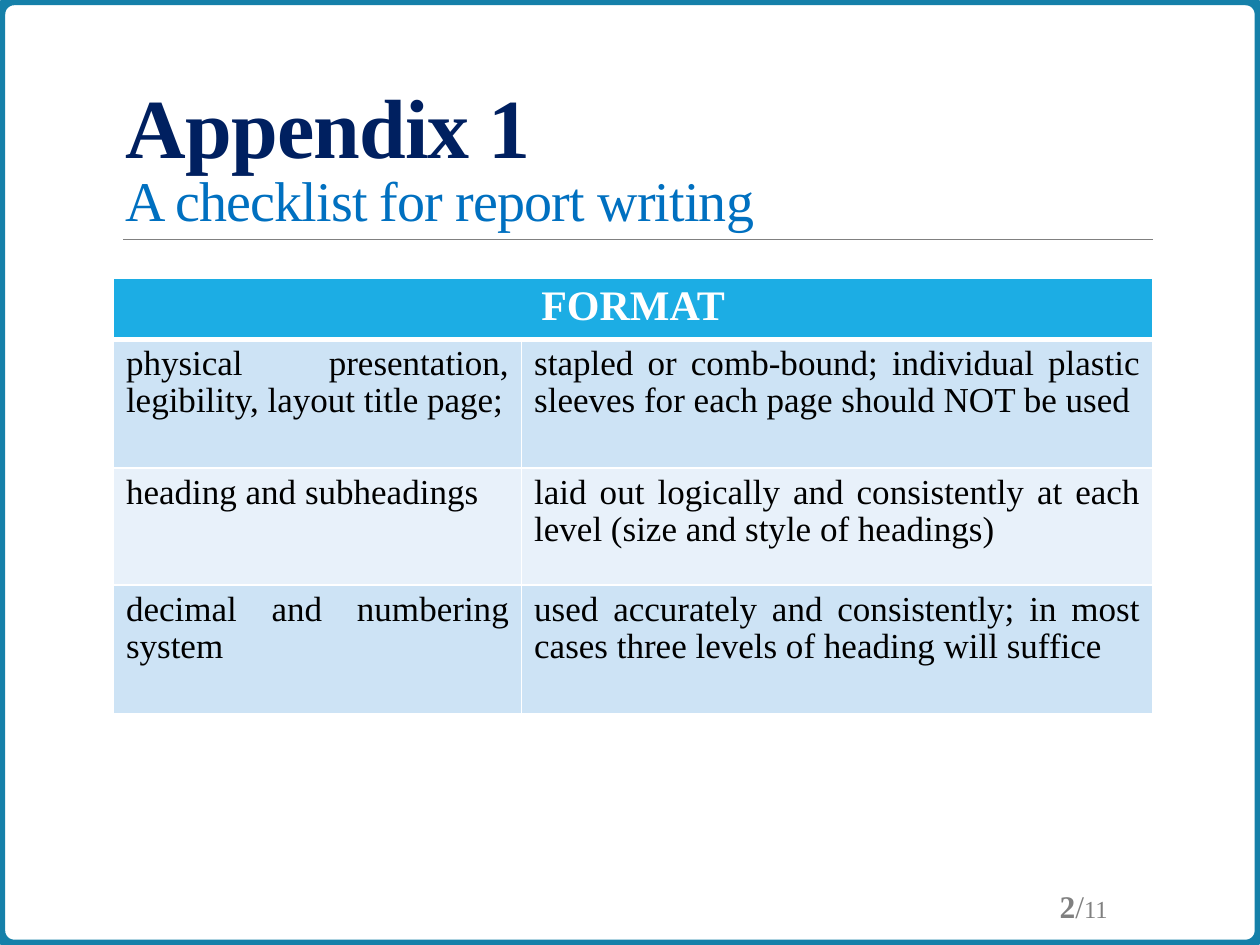
from pptx import Presentation
from pptx.dml.color import RGBColor
from pptx.enum.shapes import MSO_CONNECTOR, MSO_SHAPE
from pptx.enum.text import MSO_ANCHOR, PP_ALIGN
from pptx.oxml.ns import qn
from pptx.util import Inches, Pt
from lxml import etree

STRAIGHT = MSO_CONNECTOR.STRAIGHT
ROUNDED = MSO_SHAPE.ROUNDED_RECTANGLE
TOP, MIDDLE, BOTTOM = MSO_ANCHOR.TOP, MSO_ANCHOR.MIDDLE, MSO_ANCHOR.BOTTOM
LEFT, CENTER, RIGHT, JUSTIFY = PP_ALIGN.LEFT, PP_ALIGN.CENTER, PP_ALIGN.RIGHT, PP_ALIGN.JUSTIFY

FONT = "Times New Roman"
WHITE = RGBColor(0xFF, 0xFF, 0xFF)
BLACK = RGBColor(0, 0, 0)
GRAY = RGBColor(0x80, 0x80, 0x80)
TEAL = RGBColor(0x15, 0x80, 0xA9)
NAVY = RGBColor(0x00, 0x20, 0x60)
BLUE = RGBColor(0x00, 0x70, 0xC0)
HEADER_FILL = RGBColor(0x1C, 0xAD, 0xE4)
BAND_FILLS = (RGBColor(0xCD, 0xE3, 0xF5), RGBColor(0xE8, 0xF1, 0xFA))

HEADER = "FORMAT"
CHECKLIST = (
    ("physical presentation, legibility, layout title page;",
     "stapled or comb-bound; individual plastic sleeves for each page should NOT be used"),
    ("heading and subheadings",
     "laid out logically and consistently at each level (size and style of headings)"),
    ("decimal and numbering system",
     "used accurately and consistently; in most cases three levels of heading will suffice"),
)
COL_WIDTHS = (3.24, 5.01)
ROW_HEIGHTS = (0.46, 1.02, 0.93, 1.02)


def add_frame(s, width, height):
    """Draw the rounded border around the whole slide."""
    sp = s.shapes.add_shape(ROUNDED, 0, 0, width, height)
    sp.shadow.inherit = False
    sp.adjustments[0] = 0.015
    sp.fill.background()
    sp.line.color.rgb = TEAL
    sp.line.width = Pt(6)


def add_rule(s, left, right, y):
    """Draw the thin horizontal rule under the title."""
    line = s.shapes.add_connector(STRAIGHT, Inches(left), Inches(y), Inches(right), Inches(y))
    line.line.color.rgb = GRAY
    line.line.width = Pt(0.5)
    etree.SubElement(line._element.spPr, qn("a:effectLst"))


def add_text(s, box, anchor, align):
    """Add a wrapping text box and return its first paragraph."""
    tf = s.shapes.add_textbox(*map(Inches, box)).text_frame
    tf.word_wrap = True
    tf.vertical_anchor = anchor
    p = tf.paragraphs[0]
    p.alignment = align
    p.font.name = FONT
    return p


def add_run(p, text, size, color, bold=False, spacing=0):
    """Append a styled run, with letter spacing in points."""
    r = p.add_run()
    r.text = text
    r.font.name = FONT
    r.font.size = Pt(size)
    r.font.bold = bold
    r.font.color.rgb = color
    if spacing:
        r.font._element.set("spc", str(int(spacing * 100)))


def add_title(s):
    """Add the two-line title."""
    p = add_text(s, (0.9, 0.31, 8.25, 1.59), BOTTOM, LEFT)
    p.line_spacing = 0.85
    add_run(p, "Appendix 1", 48, NAVY, True, -0.5)
    p.add_line_break()
    add_run(p, "A checklist for report writing", 32, BLUE, False, -0.5)


def add_page_number(s):
    """Add the page number and page count."""
    p = add_text(s, (7.81, 6.99, 1.08, 0.4), MIDDLE, RIGHT)
    add_run(p, "2", 18, GRAY, True)
    add_run(p, "/", 18, GRAY)
    add_run(p, "11", 14, GRAY)


def set_borders(cell, **widths):
    """Give the cell white borders with widths in points."""
    tc_pr = cell._tc.get_or_add_tcPr()
    for i, side in enumerate("LRTB"):
        ln = etree.Element(qn(f"a:ln{side}"), w=str(Pt(widths.get(side, 1))))
        fill = etree.SubElement(ln, qn("a:solidFill"))
        etree.SubElement(fill, qn("a:srgbClr"), val=str(WHITE))
        tc_pr.insert(i, ln)


def fill_cell(cell, text, fill, align, size, color, bold=False):
    """Write and style one table cell."""
    cell.fill.solid()
    cell.fill.fore_color.rgb = fill
    cell.vertical_anchor = TOP
    p = cell.text_frame.paragraphs[0]
    p.text = text
    p.alignment = align
    p.line_spacing = 0.96
    p.font.name = FONT
    p.font.size = Pt(size)
    p.font.bold = bold
    p.font.color.rgb = color


def add_checklist(s):
    """Add the checklist table with a merged header row."""
    table = s.shapes.add_table(
        len(ROW_HEIGHTS), len(COL_WIDTHS), Inches(0.9), Inches(2.21),
        Inches(sum(COL_WIDTHS)), Inches(sum(ROW_HEIGHTS))).table
    for col, width in zip(table.columns, COL_WIDTHS):
        col.width = Inches(width)
    for row, height in zip(table.rows, ROW_HEIGHTS):
        row.height = Inches(height)
    table.cell(0, 0).merge(table.cell(0, 1))
    fill_cell(table.cell(0, 0), HEADER, HEADER_FILL, CENTER, 24, WHITE, True)
    for i, texts in enumerate(CHECKLIST):
        for j, text in enumerate(texts):
            fill_cell(table.cell(i + 1, j), text, BAND_FILLS[i % 2], JUSTIFY, 20, BLACK)
    for i, row in enumerate(table.rows):
        for cell in row.cells:
            set_borders(cell, T=3 if i == 1 else 1, B=3 if i == 0 else 1)


def main():
    """Build the slide and save it."""
    prs = Presentation()
    prs.slide_width, prs.slide_height = Inches(10), Inches(7.5)
    s = prs.slides.add_slide(prs.slide_layouts[6])
    add_rule(s, 0.98, 9.15, 1.9)
    add_frame(s, prs.slide_width, prs.slide_height)
    add_title(s)
    add_page_number(s)
    add_checklist(s)
    prs.save("out.pptx")


if __name__ == "__main__":
    main()
